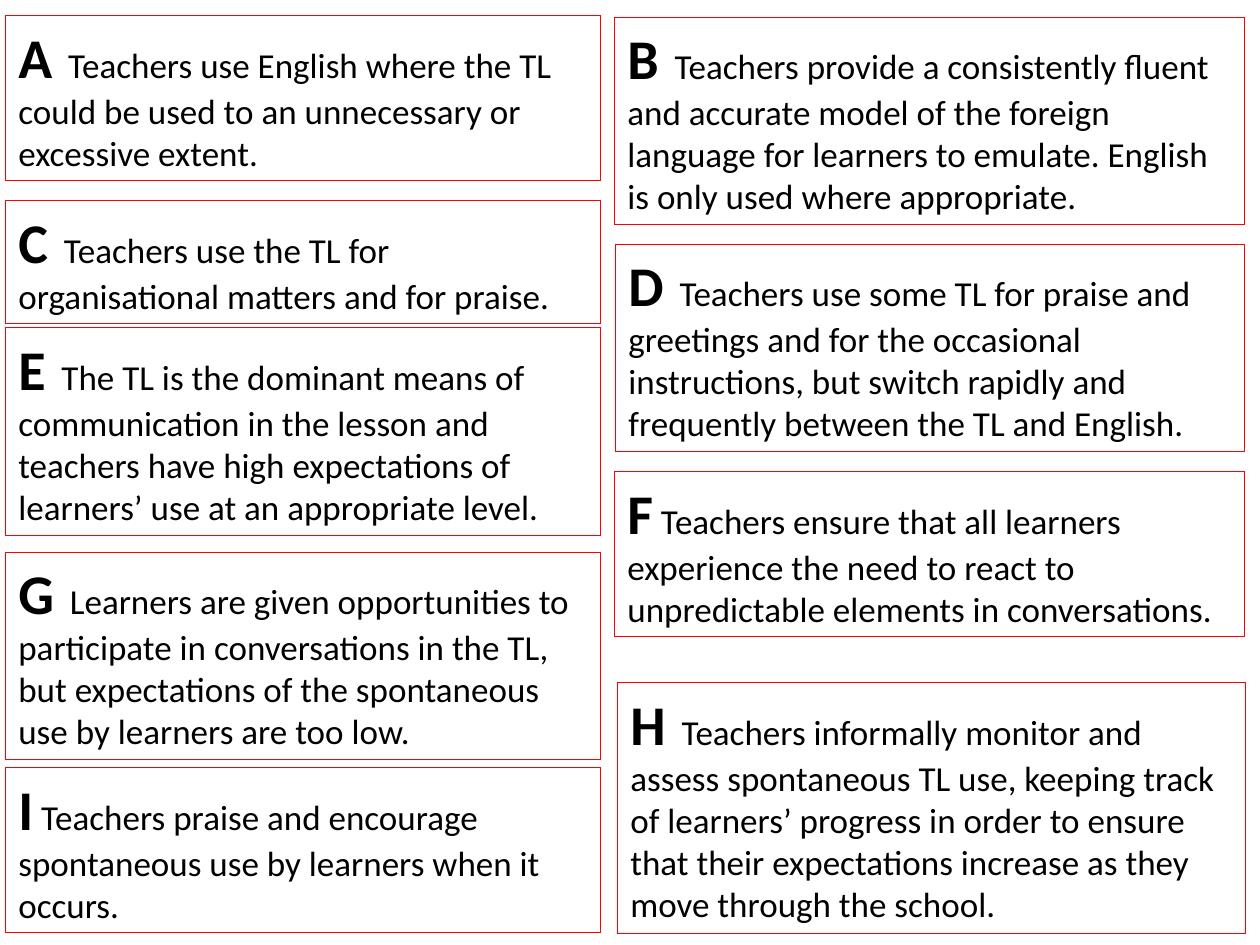
from pptx import Presentation
from pptx.dml.color import RGBColor
from pptx.enum.text import MSO_AUTO_SIZE
from pptx.util import Inches, Pt


def px(n):
    """Turn pixels, 126 to the inch, into EMU."""
    return Inches(n / 126)


def write(para, text, size=20, bold=False, color="000000", face="Calibri"):
    run = para.add_run()
    run.text = text
    font = run.font
    font.name, font.size, font.bold = face, Pt(size), bold
    font.color.rgb = RGBColor.from_string(color)


# Letter, statement, left, top, width, height
cards = [
    ("A", "  Teachers use English where the TL could be used to an unnecessary "
     "or excessive extent.", 6, 16, 595, 165),
    ("B", "  Teachers provide a consistently fluent and accurate model of the "
     "foreign language for learners to emulate. English is only used where "
     "appropriate.", 615, 17, 630, 208),
    ("C", "  Teachers use the TL for organisational matters and for praise.",
     6, 201, 595, 123),
    ("D", "  Teachers use some TL for praise and greetings and for the "
     "occasional instructions, but switch rapidly and frequently between the "
     "TL and English.", 616, 244, 629, 208),
    ("E", "  The TL is the dominant means of communication in the lesson and "
     "teachers have high expectations of learners’ use at an appropriate "
     "level.", 6, 328, 595, 208),
    ("F", " Teachers ensure that all learners experience the need to react to "
     "unpredictable elements in conversations.", 615, 472, 630, 165),
    ("G", "  Learners are given opportunities to participate in conversations "
     "in the TL, but expectations of the spontaneous use by learners are too "
     "low.", 6, 552, 595, 208),
    ("I", " Teachers praise and encourage spontaneous use by learners when it "
     "occurs.", 6, 768, 595, 165),
    ("H", "  Teachers informally monitor and assess spontaneous TL use, keeping "
     "track of learners’ progress in order to ensure that their expectations "
     "increase as they move through the school.", 618, 683, 628, 251),
]

deck = Presentation()
deck.slide_width, deck.slide_height = px(1260), px(945)
slide = deck.slides.add_slide(deck.slide_layouts[6])

for letter, text, *place in cards:
    card = slide.shapes.add_textbox(*map(px, place))
    card.line.color.rgb = RGBColor.from_string("FF0000")
    frame = card.text_frame
    frame.word_wrap = True
    frame.auto_size = MSO_AUTO_SIZE.SHAPE_TO_FIT_TEXT
    para = frame.paragraphs[0]
    write(para, letter, size=32, bold=True)
    write(para, text)

deck.save("out.pptx")
